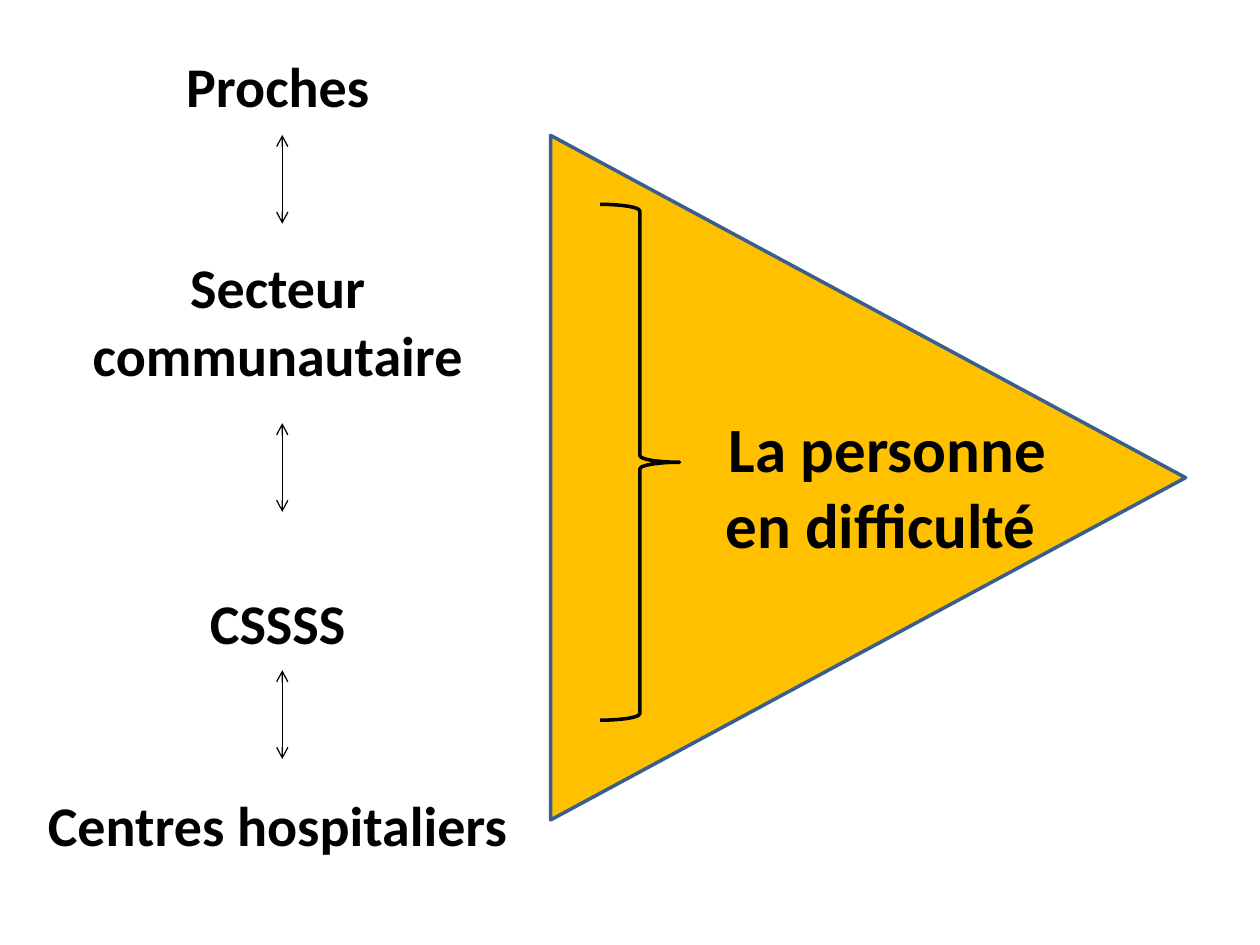
from dataclasses import dataclass

import pptx
import pptx.dml.color
import pptx.enum.shapes
import pptx.enum.text
import pptx.oxml.ns
import pptx.util
from lxml import etree
from pptx.util import Cm, Pt

AMBER = pptx.dml.color.RGBColor(0xFF, 0xC0, 0x00)
SLATE_BLUE = pptx.dml.color.RGBColor(0x3A, 0x5F, 0x8C)
BLACK = pptx.dml.color.RGBColor(0x00, 0x00, 0x00)
FONT = "Calibri"

SUPPORT_SIZE = 32
SUPPORT_LINE = SUPPORT_SIZE * 1.2
ARROW_X = 5.69
ARROW_LENGTH = 1.79


@dataclass(frozen=True)
class Box:
    """Position and size in centimetres."""
    left: float
    top: float
    width: float
    height: float

    def lengths(self) -> tuple:
        return Cm(self.left), Cm(self.top), Cm(self.width), Cm(self.height)


@dataclass(frozen=True)
class Support:
    name: str
    lines_before: int = 0


SUPPORTS = (
    Support("Proches"),
    Support("Secteur communautaire", 2),
    Support("CSSSS", 3),
    Support("Centres hospitaliers", 2),
)
ARROW_TOPS = (2.72, 8.53, 13.51)


def add_outline(slide, preset, box: Box, colour):
    """Add an unfilled preset shape with a 2 pt outline."""
    shape = slide.shapes.add_shape(preset, *box.lengths())
    shape.shadow.inherit = False
    shape.fill.background()
    shape.line.color.rgb = colour
    shape.line.width = Pt(2)
    return shape


def add_bold_text(slide, box: Box, supports: tuple, size: int) -> None:
    frame = slide.shapes.add_textbox(*box.lengths()).text_frame
    frame.word_wrap = True
    frame.text = "\n".join(support.name for support in supports)
    for paragraph, support in zip(frame.paragraphs, supports):
        paragraph.alignment = pptx.enum.text.PP_ALIGN.CENTER
        if support.lines_before:
            paragraph.space_before = Pt(support.lines_before * SUPPORT_LINE)
        for run in paragraph.runs:
            run.font.name = FONT
            run.font.size = Pt(size)
            run.font.bold = True
            run.font.color.rgb = BLACK


def add_two_way_arrow(slide, top: float) -> None:
    arrow = slide.shapes.add_connector(
        pptx.enum.shapes.MSO_CONNECTOR.STRAIGHT,
        Cm(ARROW_X), Cm(top), Cm(ARROW_X), Cm(top + ARROW_LENGTH))
    arrow.line.color.rgb = BLACK
    arrow.line.width = Pt(0.75)
    qn = pptx.oxml.ns.qn
    properties = arrow.element.spPr
    outline = properties.find(qn("a:ln"))
    for end in ("a:headEnd", "a:tailEnd"):
        etree.SubElement(outline, qn(end), type="arrow")
    etree.SubElement(properties, qn("a:effectLst"))


def main() -> None:
    presentation = pptx.Presentation()
    presentation.slide_width = Cm(25.4)
    presentation.slide_height = Cm(19.05)
    slide = presentation.slides.add_slide(presentation.slide_layouts[6])
    presets = pptx.enum.shapes.MSO_SHAPE

    person_triangle = add_outline(
        slide, presets.ISOSCELES_TRIANGLE, Box(10.6, 3.23, 13.8, 12.8), SLATE_BLUE)
    person_triangle.rotation = 90
    person_triangle.fill.solid()
    person_triangle.fill.fore_color.rgb = AMBER
    add_bold_text(slide, Box(14.3, 8.13, 7.19, 3.33),
                  (Support("La personne en difficulté "),), 36)
    add_outline(slide, presets.RIGHT_BRACE, Box(12.1, 4.12, 1.6, 10.4), BLACK)

    add_bold_text(slide, Box(0, 0.91, 11.2, 16.66), SUPPORTS, SUPPORT_SIZE)
    for top in ARROW_TOPS:
        add_two_way_arrow(slide, top)

    presentation.save("out.pptx")


if __name__ == "__main__":
    main()
